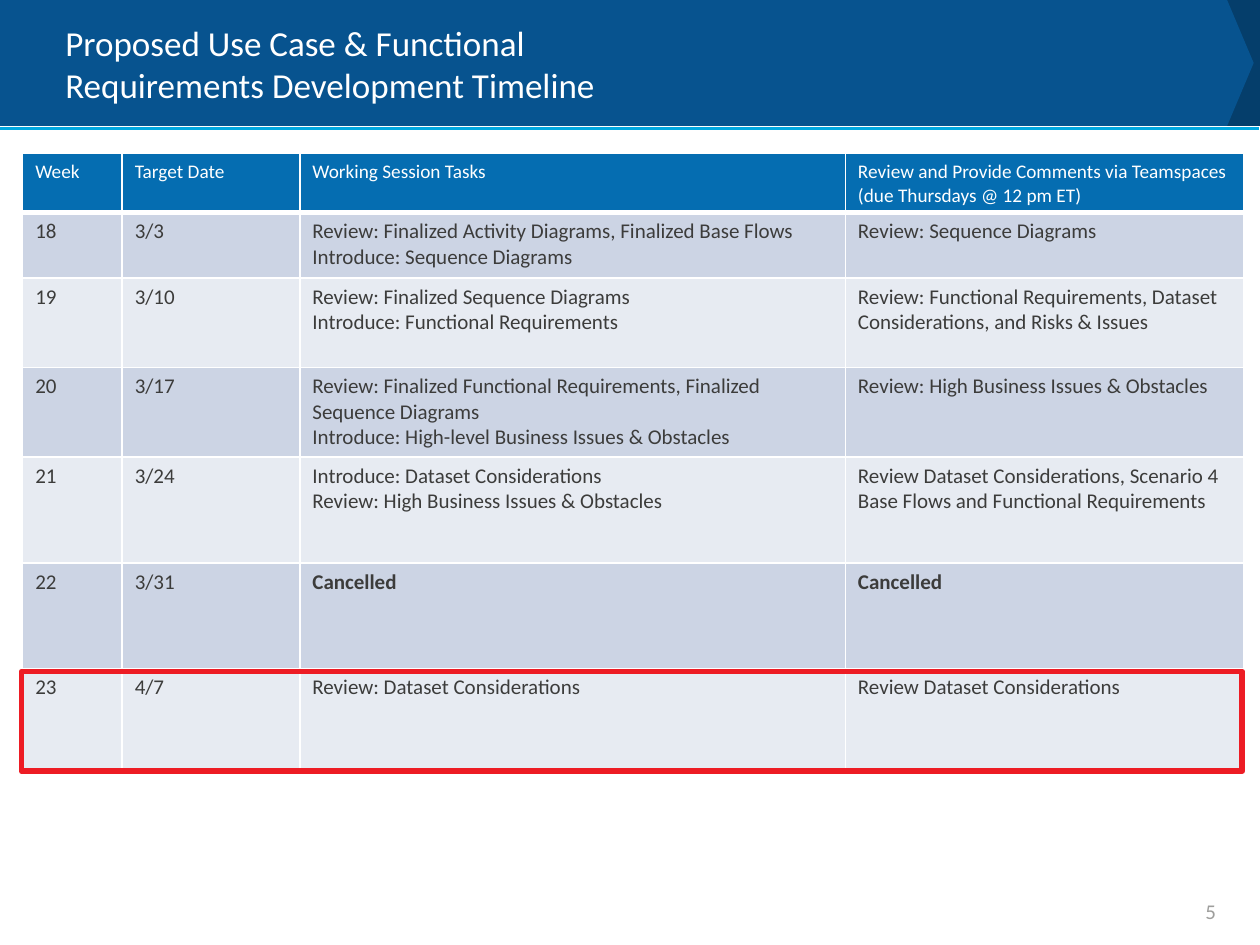
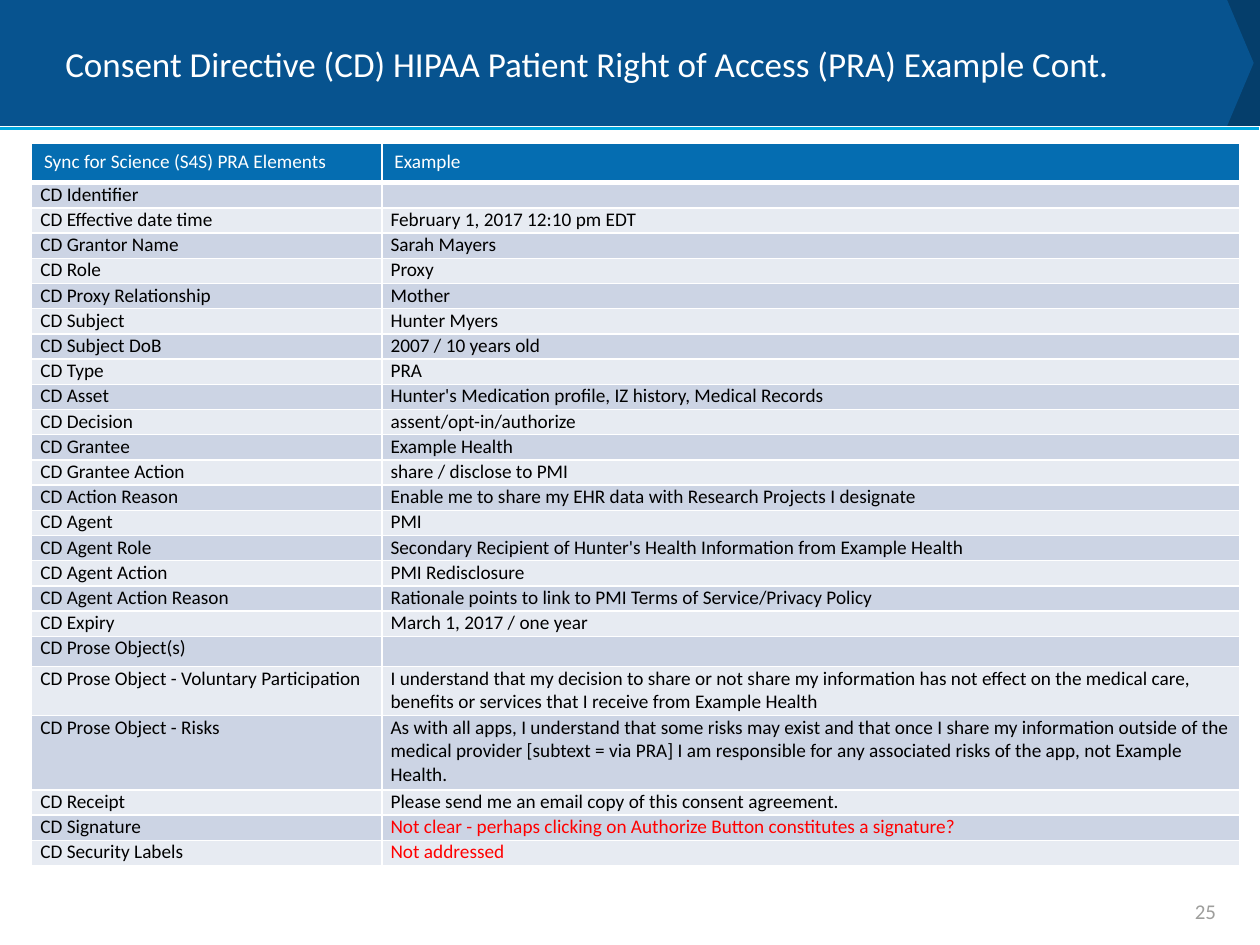
from lxml.etree import SubElement
from pptx import Presentation
from pptx.dml.color import RGBColor
from pptx.enum.shapes import MSO_CONNECTOR, MSO_SHAPE
from pptx.enum.text import MSO_ANCHOR, PP_ALIGN
from pptx.oxml.ns import qn
from pptx.util import Inches, Pt

NAVY, BLUE, SKY = "053E6B", "07538F", "00A8E1"
HEAD, BANDS = "056DB1", ("E7EBF2", "CCD4E4")
WHITE, BLACK, INK, GRAY = "FFFFFF", "000000", "3C3C3B", "9E9E9C"
RED, ALERT = "ED1C24", "FF0000"

TITLE = {"size": 20, "color": WHITE}
FOOT = {"size": 12, "color": GRAY}
LABEL = {"size": 11, "color": WHITE}
TASK = {"size": 12, "color": INK}
FIELD = {"size": 11, "color": BLACK}
LOOSE = {"margin_left": 0.1, "margin_right": 0.1, "margin_top": 0.05, "margin_bottom": 0.05}
TIGHT = {"margin_left": 0.07, "margin_right": 0.07, "margin_top": 0, "margin_bottom": 0}

WEEKS = [
    ("Week", "Target Date", "Working Session Tasks",
     "Review and Provide Comments via Teamspaces (due Thursdays @ 12 pm ET)"),
    ("18", "3/3",
     "Review: Finalized Activity Diagrams, Finalized Base Flows\nIntroduce: Sequence Diagrams",
     "Review: Sequence Diagrams"),
    ("19", "3/10",
     "Review: Finalized Sequence Diagrams\nIntroduce: Functional Requirements",
     "Review: Functional Requirements, Dataset Considerations, and Risks & Issues"),
    ("20", "3/17",
     "Review: Finalized Functional Requirements, Finalized Sequence Diagrams\n"
     "Introduce: High-level Business Issues & Obstacles",
     "Review: High Business Issues & Obstacles"),
    ("21", "3/24",
     "Introduce: Dataset Considerations\nReview: High Business Issues & Obstacles",
     "Review Dataset Considerations, Scenario 4 Base Flows and Functional Requirements"),
    ("22", "3/31", "Cancelled", "Cancelled"),
    ("23", "4/7", "Review: Dataset Considerations", "Review Dataset Considerations"),
]

UNCLEAR = "Not clear - perhaps clicking on Authorize Button constitutes a signature?"
MISSING = "Not addressed"
CONSENT = [
    ("Sync for Science (S4S) PRA Elements", "Example"),
    ("CD Identifier", ""),
    ("CD Effective date time", "February 1, 2017 12:10 pm EDT"),
    ("CD Grantor Name", "Sarah Mayers"),
    ("CD Role", "Proxy"),
    ("CD Proxy Relationship", "Mother"),
    ("CD Subject", "Hunter Myers"),
    ("CD Subject DoB", "2007 / 10 years old"),
    ("CD Type", "PRA"),
    ("CD Asset", "Hunter's Medication profile, IZ history, Medical Records"),
    ("CD Decision", "assent/opt-in/authorize"),
    ("CD Grantee", "Example Health"),
    ("CD Grantee Action", "share / disclose to PMI"),
    ("CD Action Reason", "Enable me to share my EHR data with Research Projects I designate"),
    ("CD Agent", "PMI"),
    ("CD Agent Role", "Secondary Recipient of Hunter's Health Information from Example Health"),
    ("CD Agent Action", "PMI Redisclosure"),
    ("CD Agent Action Reason", "Rationale points to link to PMI Terms of Service/Privacy Policy"),
    ("CD Expiry", "March 1, 2017 / one year"),
    ("CD Prose Object(s)", ""),
    ("CD Prose Object - Voluntary Participation",
     "I understand that my decision to share or not share my information has not effect on "
     "the medical care, benefits or services that I receive from Example Health"),
    ("CD Prose Object - Risks",
     "As with all apps, I understand that some risks may exist and that once I share my "
     "information outside of the medical provider [subtext = via PRA] I am responsible for "
     "any associated risks of the app, not Example Health."),
    ("CD Receipt", "Please send me an email copy of this consent agreement."),
    ("CD Signature", UNCLEAR),
    ("CD Security Labels", MISSING),
]


def hue(code):
    return RGBColor.from_string(code)


def place(*sizes):
    return [Inches(size) for size in sizes]


def style(font, look):
    font.name = "Calibri"
    for key, value in look.items():
        if key == "color":
            font.color.rgb = hue(value)
        else:
            setattr(font, key, Pt(value) if key == "size" else value)


def write(frame, text, look, align=PP_ALIGN.LEFT):
    for spot, line in enumerate(text.split("\n")):
        para = frame.add_paragraph() if spot else frame.paragraphs[0]
        para.text = line
        para.alignment = align
        for run in para.runs:
            style(run.font, look)
        if not line:
            SubElement(para._p, qn("a:endParaRPr"), sz=str(look["size"] * 100))


def add_text(slide, area, text, look, align=PP_ALIGN.LEFT):
    frame = slide.shapes.add_textbox(*place(*area)).text_frame
    frame.word_wrap = True
    frame.vertical_anchor = MSO_ANCHOR.MIDDLE
    write(frame, text, look, align)


def add_plate(slide, area, tip, fill):
    plate = slide.shapes.add_shape(MSO_SHAPE.PENTAGON, *place(*area))
    plate.adjustments[0] = tip
    plate.shadow.inherit = False
    plate.fill.solid()
    plate.fill.fore_color.rgb = hue(fill)
    plate.line.fill.background()


def add_rule(slide, ends):
    rule = slide.shapes.add_connector(MSO_CONNECTOR.STRAIGHT, *place(*ends))
    rule.line.color.rgb = hue(SKY)
    rule.line.width = Pt(2.25)
    SubElement(rule._element.spPr, qn("a:effectLst"))


def add_focus(slide, area):
    box = slide.shapes.add_shape(MSO_SHAPE.RECTANGLE, *place(*area))
    box.shadow.inherit = False
    box.fill.background()
    box.line.color.rgb = hue(RED)
    box.line.width = Pt(3.25)


def add_edge(cell, side, width):
    edge = SubElement(cell._tc.get_or_add_tcPr(), qn("a:ln" + side), w=str(Pt(width)))
    fill = SubElement(edge, qn("a:solidFill"))
    SubElement(fill, qn("a:srgbClr"), val=WHITE)


def add_grid(slide, spot, wide, high, data, look, pads, marks):
    area = place(*spot, sum(wide), sum(high))
    table = slide.shapes.add_table(len(high), len(wide), *area).table
    table.horz_banding = False
    for col, size in zip(table.columns, wide):
        col.width = Inches(size)
    for at, (row, size) in enumerate(zip(table.rows, high)):
        row.height = Inches(size)
        for cell, text in zip(row.cells, data[at]):
            for key, value in (pads if at else LOOSE).items():
                setattr(cell, key, Inches(value))
            edges = {"L": 1, "R": 1, "T": 3 if at == 1 else 1, "B": 1 if at else 3}
            for side, width in edges.items():
                add_edge(cell, side, width)
            cell.fill.solid()
            cell.fill.fore_color.rgb = hue(BANDS[at % 2] if at else HEAD)
            write(cell.text_frame, text, {**look, **marks.get(text, {})} if at else LABEL)


def add_page(deck, title, number):
    slide = deck.slides.add_slide(deck.slide_layouts[6])
    add_plate(slide, (9.55, 0, 0.45, 1), 0, NAVY)
    add_plate(slide, (0, 0, 9.95, 1), 0.211, BLUE)
    add_rule(slide, (0, 1.02, 9.99, 1.02))
    add_text(slide, (0.42, 0.08, 9.17, 0.85), title, TITLE)
    add_text(slide, (7.42, 7.11, 2.33, 0.25), number, FOOT, PP_ALIGN.RIGHT)
    return slide


def main():
    deck = Presentation()
    deck.slide_width, deck.slide_height = place(10, 7.5)

    plan = add_page(deck, "Proposed Use Case & Functional\vRequirements Development Timeline", "5")
    add_grid(plan, (0.18, 1.22), (0.79, 1.41, 4.33, 3.16),
             [0.46, 0.52] + [0.71] * 2 + [0.84] * 3,
             WEEKS, TASK, LOOSE, {"Cancelled": {"bold": True}})
    add_focus(plan, (0.17, 5.33, 9.69, 0.79))

    form = add_page(deck, "Consent Directive (CD) HIPAA Patient Right of Access (PRA) Example Cont.", "25")
    add_grid(form, (0.25, 1.14), (2.78, 6.81),
             [0.31] + [0.2] * 18 + [0.24, 0.39, 0.59] + [0.2] * 3,
             CONSENT, FIELD, TIGHT, dict.fromkeys((UNCLEAR, MISSING), {"color": ALERT}))

    deck.save("out.pptx")


if __name__ == "__main__":
    main()
